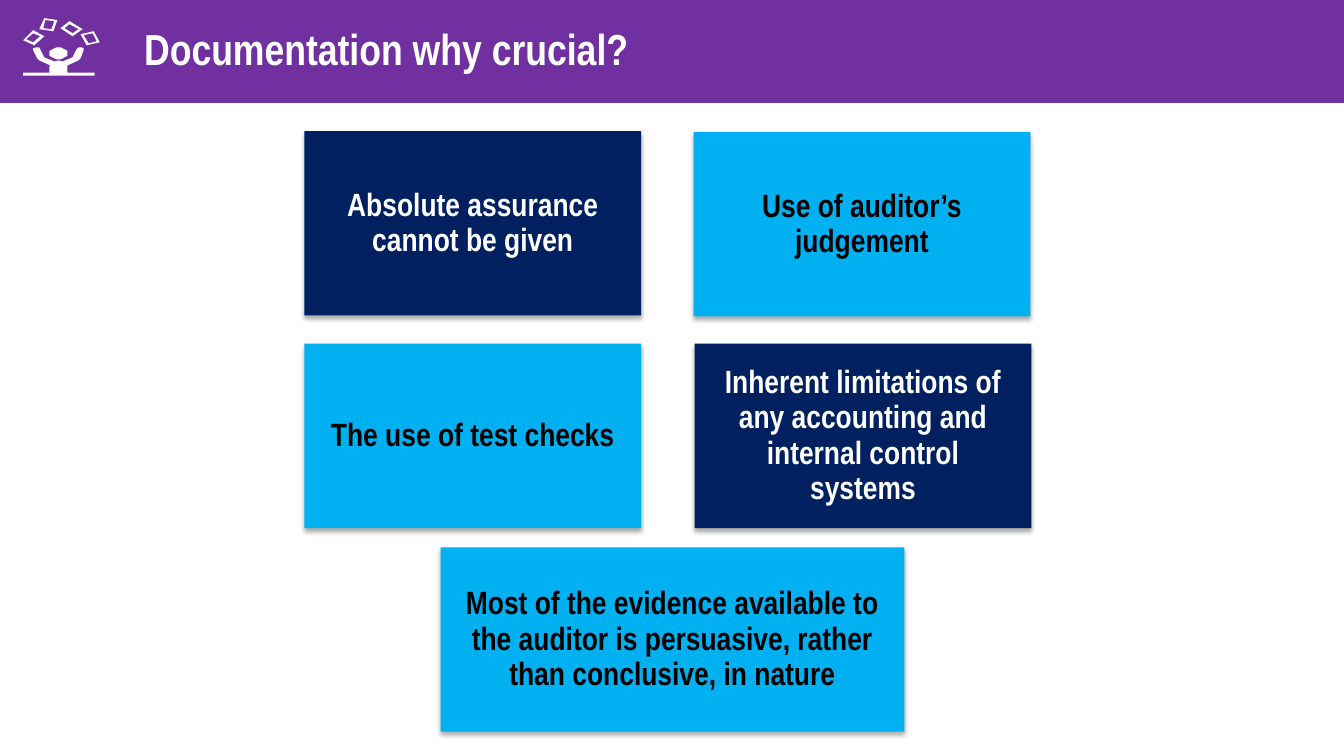
import math
import pptx
import pptx.util
import pptx.dml.color
import pptx.enum.shapes
import pptx.enum.text
import pptx.oxml
import pptx.oxml.ns

Inches = pptx.util.Inches
RGBColor = pptx.dml.color.RGBColor

PURPLE = RGBColor(0x70, 0x30, 0xA0)
NAVY = RGBColor(0x00, 0x20, 0x60)
SKY = RGBColor(0x00, 0xB0, 0xF0)
WHITE = RGBColor(0xFF, 0xFF, 0xFF)
BLACK = RGBColor(0x00, 0x00, 0x00)

SHADE = (
    f'<a:outerShdw {pptx.oxml.ns.nsdecls("a")} blurRad="44450" dist="27940" '
    'dir="5400000" rotWithShape="0"><a:srgbClr val="000000">'
    '<a:alpha val="32000"/></a:srgbClr></a:outerShdw>'
)

HEAD = [
    (round(58 + 9 * math.cos(t * math.pi / 12)), round(53 + 6 * math.sin(t * math.pi / 12)))
    for t in range(24)
]
ICON = [
    [(33, 30), (44, 36), (34, 45), (23, 40)],
    [(33, 33), (26, 39), (33, 42), (40, 36)],
    [(69, 21), (60, 28), (72, 36), (82, 29)],
    [(69, 24), (78, 29), (72, 33), (64, 28)],
    [(57, 20), (44, 18), (39, 29), (53, 31)],
    [(54, 21), (51, 29), (43, 28), (45, 20)],
    [(93, 31), (99, 42), (86, 45), (80, 34)],
    [(92, 33), (83, 35), (88, 43), (96, 41)],
    HEAD,
    [(58, 60), (54, 61), (44, 57), (40, 49), (39, 47), (36, 47), (33, 48),
     (33, 50), (37, 58), (39, 60), (50, 65), (49, 66), (49, 72), (23, 72),
     (23, 75), (94, 75), (94, 72), (67, 72), (67, 65), (78, 60), (80, 58),
     (83, 50), (83, 48), (81, 47), (78, 47), (76, 49), (72, 57), (62, 61)],
]


def write(shape, text, size=23, color=BLACK, align="CENTER", inset=0.2, left=None, lead=None):
    """Fill a shape with one formatted, vertically centred paragraph."""
    frame = shape.text_frame
    frame.word_wrap = True
    frame.vertical_anchor = pptx.enum.text.MSO_ANCHOR.MIDDLE
    frame.margin_left = Inches(inset if left is None else left)
    frame.margin_right = Inches(inset)
    frame.margin_top = frame.margin_bottom = Inches(inset)
    para = frame.paragraphs[0]
    para.alignment = pptx.enum.text.PP_ALIGN[align]
    para.line_spacing = lead
    run = para.add_run()
    run.text = text
    run.font.name = "Arial Narrow"
    run.font.size = pptx.util.Pt(size)
    run.font.bold = True
    run.font.color.rgb = color


class Deck:
    """Hold the style and the current slide."""

    def __init__(self):
        """Start a wide deck with one blank slide."""
        self.file = pptx.Presentation()
        self.file.slide_width = Inches(13.33)
        self.file.slide_height = Inches(7.5)
        self.slide = self.file.slides.add_slide(self.file.slide_layouts[6])

    def paint(self, shape, fill):
        """Give a shape a plain fill without line or shadow."""
        shape.shadow.inherit = False
        shape.fill.solid()
        shape.fill.fore_color.rgb = fill
        shape.line.fill.background()
        return shape

    def rect(self, left, top, width, height, fill):
        """Add a plain rectangle."""
        shape = self.slide.shapes.add_shape(
            pptx.enum.shapes.MSO_SHAPE.RECTANGLE,
            Inches(left), Inches(top), Inches(width), Inches(height))
        return self.paint(shape, fill)

    def banner(self, text):
        """Add the title band across the top."""
        band = self.rect(-0.04, -0.08, 13.37, 1.11, PURPLE)
        band.line.color.rgb = WHITE
        band.line.width = pptx.util.Pt(0.5)
        write(band, text, size=31, color=WHITE, align="LEFT", inset=0.05, left=1.47)

    def icon(self, loops):
        """Add the juggler as one outline, in hundredths of an inch."""
        pen = self.slide.shapes.build_freeform(*loops[0][0], scale=Inches(0.01))
        for loop in loops:
            pen.move_to(*loop[0])
            pen.add_line_segments(loop[1:], close=True)
        self.paint(pen.convert_to_shape(), WHITE)

    def card(self, text, left, top, width=3.34, dark=False):
        """Add a shadowed card with centred text."""
        card = self.rect(left, top, width, 1.83, NAVY if dark else SKY)
        glow = card._element.spPr.find(pptx.oxml.ns.qn("a:effectLst"))
        glow.append(pptx.oxml.parse_xml(SHADE))
        write(card, text, color=WHITE if dark else BLACK, lead=0.92)


def main():
    """Build the slide and save it."""
    deck = Deck()
    deck.banner("Documentation why crucial?")
    deck.icon(ICON)
    deck.card("Absolute assurance cannot be given", 3.02, 1.3, dark=True)
    deck.card("Use of auditor’s judgement", 6.88, 1.31)
    deck.card("The use of test checks", 3.02, 3.41)
    deck.card("Inherent limitations of any accounting and internal control systems",
              6.89, 3.41, dark=True)
    deck.card("Most of the evidence available to the auditor is persuasive, "
              "rather than conclusive, in nature", 4.37, 5.43, width=4.6)
    deck.file.save("out.pptx")


if __name__ == "__main__":
    main()
